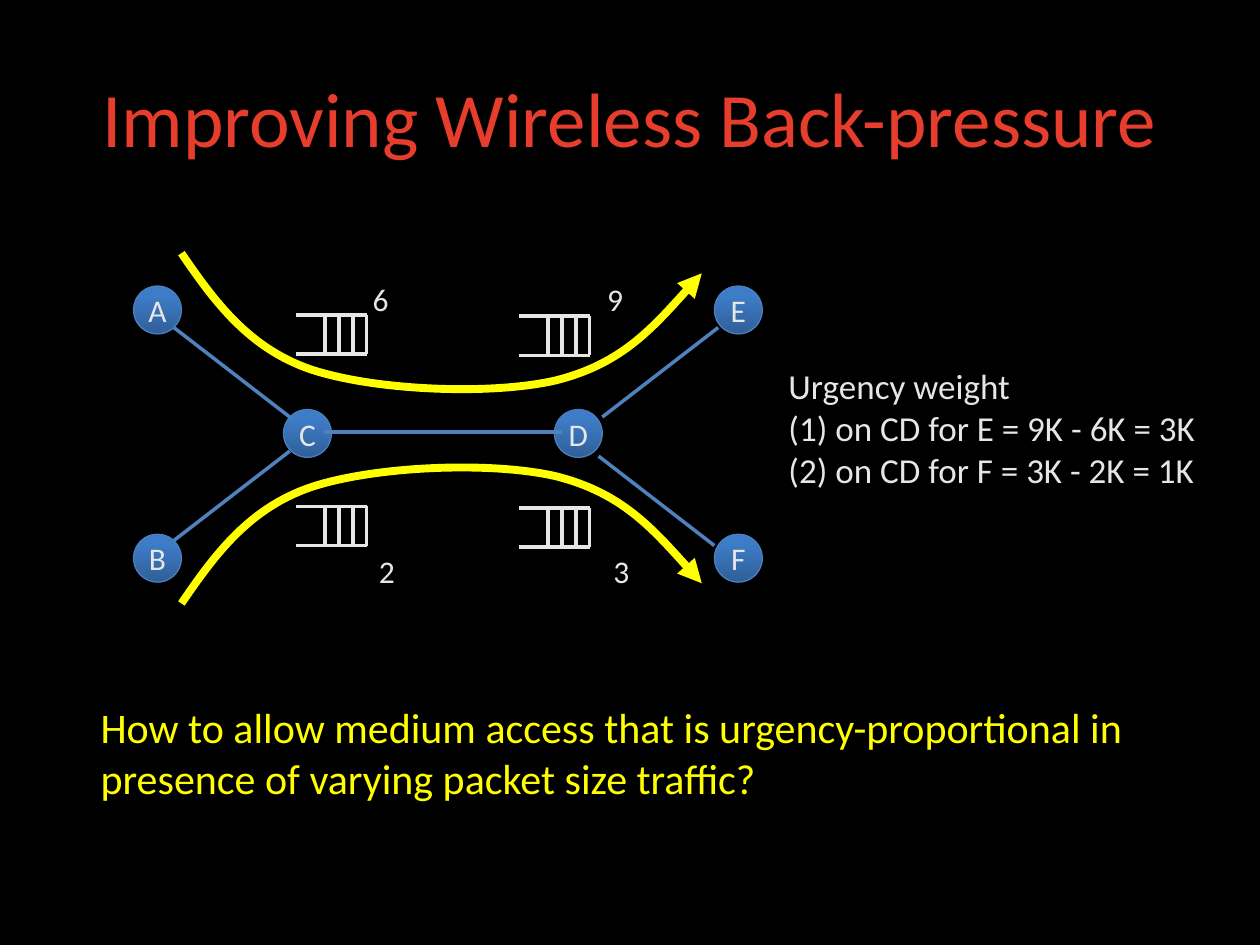
from lxml import etree
from pptx import Presentation
from pptx.dml.color import RGBColor
from pptx.enum.shapes import MSO_CONNECTOR, MSO_SHAPE
from pptx.enum.text import MSO_ANCHOR, PP_ALIGN
from pptx.oxml.ns import qn
from pptx.util import Inches, Pt

STRAIGHT = MSO_CONNECTOR.STRAIGHT
OVAL = MSO_SHAPE.OVAL
MIDDLE, TOP = MSO_ANCHOR.MIDDLE, MSO_ANCHOR.TOP
LEFT, CENTER = PP_ALIGN.LEFT, PP_ALIGN.CENTER

FONT = "Calibri"
COLORS = {
    "background": "000000",
    "title": "E63D2C",
    "text": "E6E6E6",
    "flow": "FFFF00",
    "link": "4F81BD",
    "node_line": "4B7EBC",
    "node_dark": "2F5F99",
    "node_light": "3D7CC7",
}

# Diagram parts, in inches from the top left corner of the diagram
NODE_SIZE = 0.38
NODES = {"A": (0, 0.26), "C": (1.19, 1.24), "B": (0, 2.23),
         "E": (4.61, 0.26), "D": (3.34, 1.24), "F": (4.61, 2.23)}
LINKS = [((0.32, 0.59), (1.24, 1.3)), ((0.32, 2.28), (1.24, 1.57)),
         ((3.72, 1.3), (4.64, 0.59)), ((3.69, 1.61), (4.61, 2.32)),
         ((1.51, 1.42), (3.4, 1.42))]
# Start point, then two control points and an end point for each curve
FLOW = [(0.38, 0), (0.64, 0.38), (0.91, 0.75), (1.4, 0.92),
        (1.9, 1.09), (2.83, 1.13), (3.35, 1.01),
        (3.87, 0.88), (4.19, 0.52), (4.51, 0.16)]
QUEUES = [(1.29, 0.49), (1.29, 2.01), (3.06, 0.5), (3.06, 2.02)]
QUEUE_WIDTH, QUEUE_HEIGHT, SLOT_WIDTH, SLOT_COUNT = 0.56, 0.31, 0.11, 4
QUEUE_LABELS = [("6", 1.8, 0.16), ("2", 1.85, 2.32),
                ("9", 3.66, 0.16), ("3", 3.71, 2.32)]


def color(name):
    return RGBColor.from_string(COLORS[name])


def write_text(frame, lines, size, color_name, align=LEFT, anchor=TOP):
    frame.vertical_anchor = anchor
    for index, line in enumerate(lines):
        paragraph = frame.add_paragraph() if index else frame.paragraphs[0]
        paragraph.alignment = align
        run = paragraph.add_run()
        run.text = line
        run.font.name = FONT
        run.font.size = Pt(size)
        run.font.color.rgb = color(color_name)


def add_text(slide, box, lines, size, color_name, align=LEFT, anchor=TOP, wrap=True):
    frame = slide.shapes.add_textbox(*box).text_frame
    frame.word_wrap = wrap
    write_text(frame, lines, size, color_name, align, anchor)
    return frame


def add_line(shapes, start, end, color_name):
    connector = shapes.add_connector(STRAIGHT, *start, *end)
    connector.line.color.rgb = color(color_name)
    connector.line.width = Pt(2)
    etree.SubElement(connector._element.spPr, qn("a:effectLst"))


def add_node(slide, left, top, label):
    size = Inches(NODE_SIZE)
    node = slide.shapes.add_shape(OVAL, left, top, size, size)
    node.shadow.inherit = False
    node.fill.gradient()
    node.fill.gradient_angle = 90
    stops = node.fill.gradient_stops
    for stop, name, position in zip(stops, ("node_dark", "node_light"), (0, 0.8)):
        stop.color.rgb = color(name)
        stop.position = position
    node.line.color.rgb = color("node_line")
    node.line.width = Pt(0.75)
    frame = node.text_frame
    frame.margin_left = frame.margin_right = frame.margin_top = frame.margin_bottom = 0
    write_text(frame, [label], 18, "text", CENTER, MIDDLE)


def add_flow(slide, points):
    """Draw a smooth arrow through cubic curve points."""
    builder = slide.shapes.build_freeform(*points[0])
    builder.add_line_segments(points[1:], close=False)
    flow = builder.convert_to_shape()
    segments = list(flow._element.iter(qn("a:lnTo")))
    for index in range(0, len(segments), 3):
        curve = etree.Element(qn("a:cubicBezTo"))
        segments[index].addprevious(curve)
        for segment in segments[index:index + 3]:
            curve.append(segment[0])
            segment.getparent().remove(segment)
    flow.shadow.inherit = False
    flow.fill.background()
    flow.line.color.rgb = color("flow")
    flow.line.width = Pt(4.5)
    line = flow.line._get_or_add_ln()
    etree.SubElement(line, qn("a:tailEnd"), type="triangle")


def add_queue(slide, left, top):
    shapes = slide.shapes.add_group_shape().shapes
    right, bottom = left + Inches(QUEUE_WIDTH), top + Inches(QUEUE_HEIGHT)
    for y in (top, bottom):
        add_line(shapes, (left, y), (right, y), "text")
    for slot in range(SLOT_COUNT):
        x = right - slot * Inches(SLOT_WIDTH)
        add_line(shapes, (x, bottom), (x, top), "text")


def add_network(slide, left, top, width, height):
    def place(point):
        return left + Inches(point[0]), top + Inches(point[1])

    for label, point in NODES.items():
        add_node(slide, *place(point), label)
    for start, end in LINKS:
        add_line(slide.shapes, place(start), place(end), "link")
    upper = [place(point) for point in FLOW]
    lower = [(x, 2 * top + height - y) for x, y in upper]
    for points in (upper, lower):
        add_flow(slide, points)
    for point in QUEUES:
        add_queue(slide, *place(point))
    for label, x, y in QUEUE_LABELS:
        box = (*place((x, y)), Inches(0.33), Inches(0.4))
        add_text(slide, box, [label], 18, "text", wrap=False)


def add_urgency_weights(slide, *box):
    lines = ["Urgency weight",
             "(1) on CD for E = 9K - 6K = 3K",
             "(2) on CD for F = 3K - 2K = 1K"]
    frame = add_text(slide, box, lines, 20, "text")
    frame.margin_top = frame.margin_bottom = Inches(0.1)


def main():
    presentation = Presentation()
    presentation.slide_width, presentation.slide_height = Inches(10), Inches(7.5)
    slide = presentation.slides.add_slide(presentation.slide_layouts[6])
    slide.background.fill.solid()
    slide.background.fill.fore_color.rgb = color("background")

    title_box = (Inches(0.5), Inches(0.3), Inches(9), Inches(1.25))
    add_text(slide, title_box, ["Improving Wireless Back-pressure"], 44, "title",
             CENTER, MIDDLE)
    add_network(slide, Inches(1.06), Inches(2.01), Inches(4.99), Inches(2.78))
    add_urgency_weights(slide, Inches(6.16), Inches(2.79), Inches(3.73), Inches(1.21))
    question_box = (Inches(0.7), Inches(5.52), Inches(8.58), Inches(0.91))
    question = ("How to allow medium access that is urgency-proportional in "
                "presence of varying packet size traffic?")
    add_text(slide, question_box, [question], 24, "flow")
    presentation.save("out.pptx")


if __name__ == "__main__":
    main()
